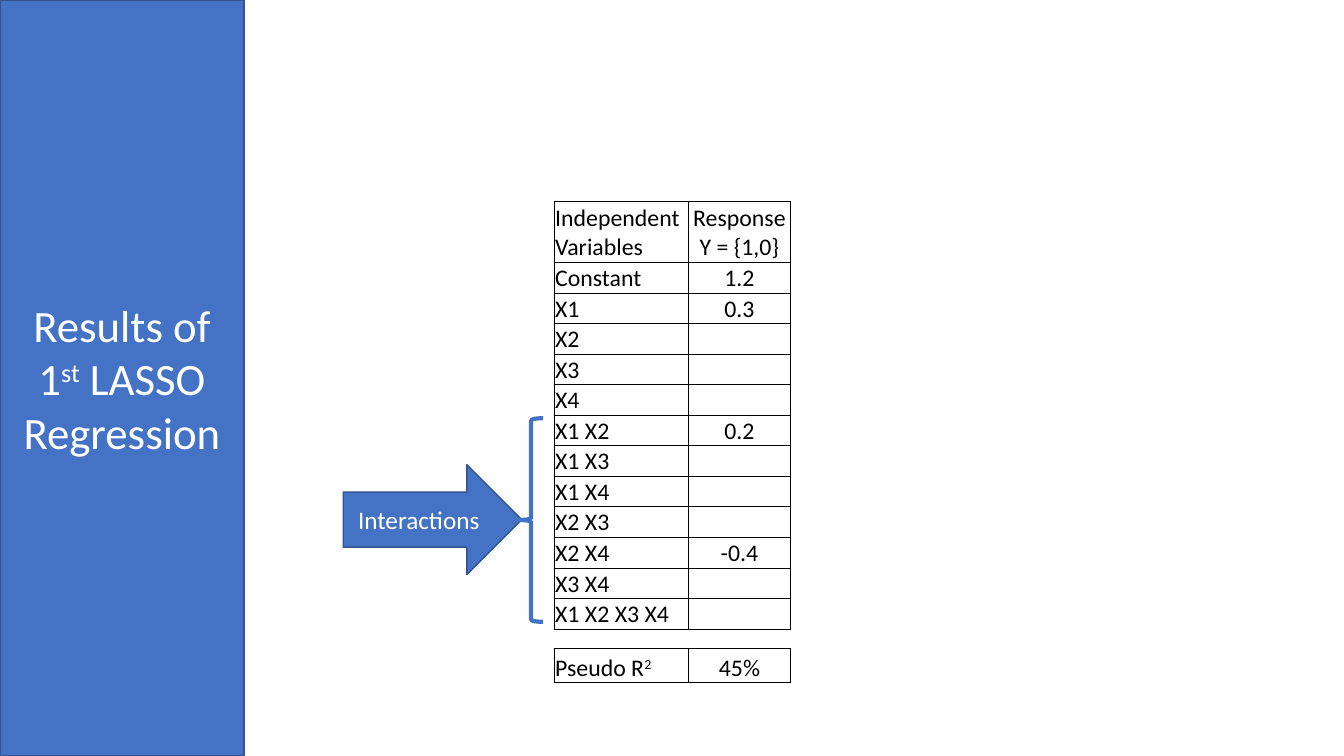
"""Build the slide with the results of the first LASSO regression."""
import lxml.etree
import pptx
import pptx.dml.color
import pptx.enum.shapes
import pptx.enum.text
import pptx.oxml.ns
import pptx.util

Cm, Pt = pptx.util.Cm, pptx.util.Pt
ALIGN = pptx.enum.text.PP_ALIGN
ANCHOR = pptx.enum.text.MSO_ANCHOR
SHAPE = pptx.enum.shapes.MSO_SHAPE
qn = pptx.oxml.ns.qn

COLORS = {"blue": "4472C4", "edge": "325491", "white": "FFFFFF", "black": "000000"}
TITLE = [("Results of 1", False), ("st", True), (" LASSO Regression", False)]
ARROW = "Interactions"
HEADER = ("Independent Variables", "Response Y = {1,0}")
COEFFICIENTS = [
    ("Constant", "1.2"),
    ("X1", "0.3"),
    ("X2", ""),
    ("X3", ""),
    ("X4", ""),
    ("X1 X2", "0.2"),
    ("X1 X3", ""),
    ("X1 X4", ""),
    ("X2 X3", ""),
    ("X2 X4", "-0.4"),
    ("X3 X4", ""),
    ("X1 X2 X3 X4", ""),
]
FIT = ([("Pseudo R", False), ("2", True)], "45%")
COL_WIDTHS = (3.38, 2.57)
HEADER_H, ROW_H, GAP_H, FIT_H = 1.53, 0.77, 0.48, 0.87


def rgb(name):
    return pptx.dml.color.RGBColor.from_string(COLORS[name])


def write(tf, content, size, color, align):
    p = tf.paragraphs[0]
    p.alignment = align
    p.font.size, p.font.name = Pt(size), "Calibri"
    p.font.color.rgb = rgb(color)
    runs = [(content, False)] if isinstance(content, str) else content
    for text, raised in runs:
        if text:
            r = p.add_run()
            r.text = text
            if raised:
                r._r.get_or_add_rPr().set("baseline", "30000")
    if not p.runs:
        lxml.etree.SubElement(p._p, qn("a:endParaRPr"), sz=str(size * 100))


def paint(sp):
    sp.fill.solid()
    sp.fill.fore_color.rgb = rgb("blue")
    sp.line.color.rgb = rgb("edge")
    sp.line.width = Pt(1)


def set_borders(cell, sides):
    tc_pr = cell._tc.get_or_add_tcPr()
    for side in "LRTB":
        ln = lxml.etree.SubElement(tc_pr, qn(f"a:ln{side}"), w=str(Pt(0.5)))
        if side in sides:
            fill = lxml.etree.SubElement(ln, qn("a:solidFill"))
            lxml.etree.SubElement(fill, qn("a:srgbClr"), val=COLORS["black"])
        else:
            lxml.etree.SubElement(ln, qn("a:noFill"))


def add_title(slide):
    sp = slide.shapes.title
    sp.left, sp.top, sp.width, sp.height = Cm(0), Cm(0), Cm(6.15), Cm(19.05)
    paint(sp)
    tf = sp.text_frame
    tf.auto_size = pptx.enum.text.MSO_AUTO_SIZE.NONE
    tf.word_wrap = True
    tf.vertical_anchor = ANCHOR.MIDDLE
    write(tf, TITLE, 32, "white", ALIGN.CENTER)


def add_results(slide):
    rows = [HEADER, *COEFFICIENTS, ("", ""), FIT]
    heights = [HEADER_H, *[ROW_H] * len(COEFFICIENTS), GAP_H, FIT_H]
    gap = len(rows) - 2
    table = slide.shapes.add_table(
        len(rows), 2, Cm(13.97), Cm(5.08), Cm(sum(COL_WIDTHS)), Cm(sum(heights))
    ).table
    table.first_row = table.horz_banding = False
    for column, width in zip(table.columns, COL_WIDTHS):
        column.width = Cm(width)
    for i, (row, height) in enumerate(zip(rows, heights)):
        table.rows[i].height = Cm(height)
        for j, content in enumerate(row):
            cell = table.cell(i, j)
            cell.margin_left = cell.margin_right = cell.margin_top = Cm(0.02)
            cell.margin_bottom = Cm(0)
            cell.vertical_anchor = ANCHOR.BOTTOM
            set_borders(cell, "TB" if i == gap else "LRTB")
            cell.fill.background()
            size = 8 if i == gap else 17
            write(cell.text_frame, content, size, "black", ALIGN.CENTER if j else ALIGN.LEFT)


def add_interactions(slide):
    arrow = slide.shapes.add_shape(SHAPE.RIGHT_ARROW, Cm(8.65), Cm(11.71), Cm(4.5), Cm(2.77))
    arrow.shadow.inherit = False
    paint(arrow)
    arrow.text_frame.vertical_anchor = ANCHOR.MIDDLE
    write(arrow.text_frame, ARROW, 18, "white", ALIGN.CENTER)
    brace = slide.shapes.add_shape(SHAPE.LEFT_BRACE, Cm(13.08), Cm(10.54), Cm(0.61), Cm(5.13))
    brace.shadow.inherit = False
    brace.fill.background()
    brace.line.color.rgb = rgb("blue")
    brace.line.width = Pt(3)


def main():
    prs = pptx.Presentation()
    prs.slide_width, prs.slide_height = Cm(33.87), Cm(19.05)
    slide = prs.slides.add_slide(prs.slide_layouts[5])
    add_title(slide)
    add_results(slide)
    add_interactions(slide)
    prs.save("out.pptx")


if __name__ == "__main__":
    main()
